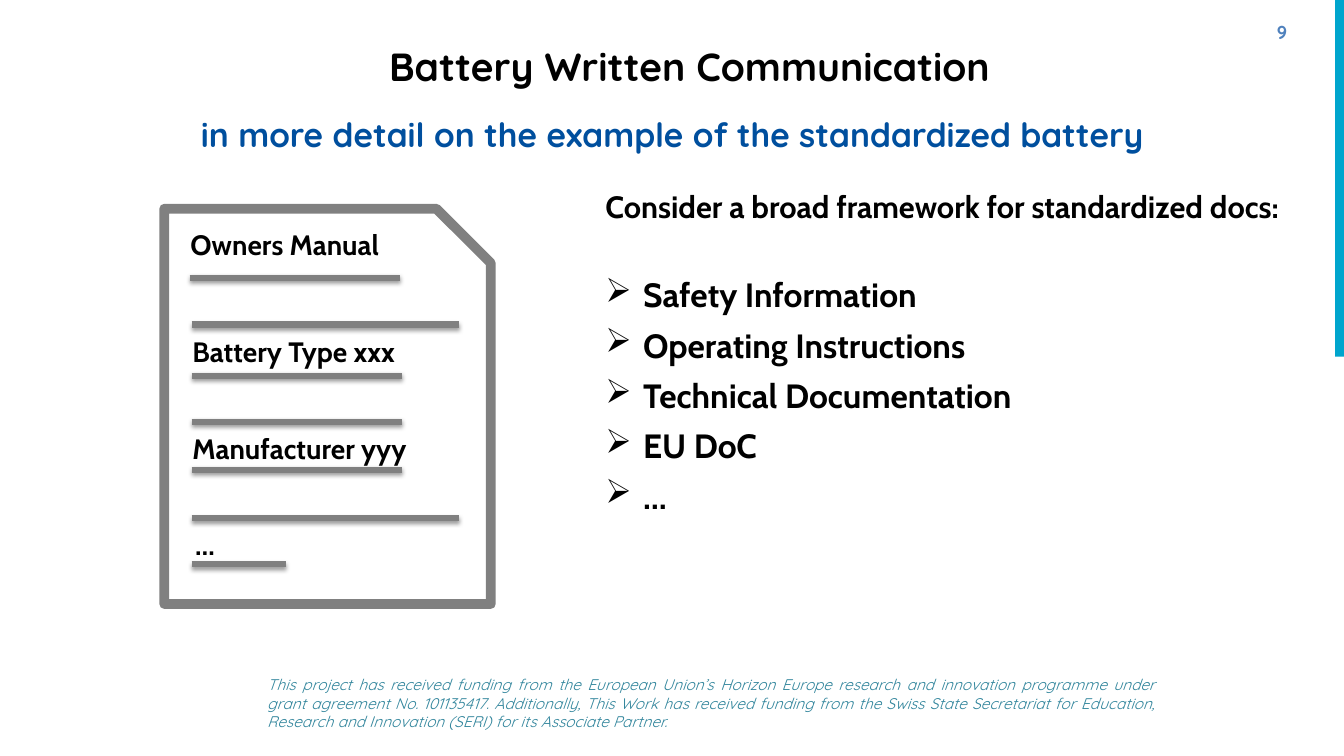
from lxml import etree
from pptx import Presentation
from pptx.dml.color import RGBColor
from pptx.enum.shapes import MSO_CONNECTOR, MSO_SHAPE
from pptx.enum.text import MSO_ANCHOR, PP_ALIGN
from pptx.oxml import parse_xml
from pptx.oxml.ns import nsdecls, qn
from pptx.util import Cm, Pt

STRAIGHT = MSO_CONNECTOR.STRAIGHT
RECTANGLE, SNIPPED = MSO_SHAPE.RECTANGLE, MSO_SHAPE.SNIP_1_RECTANGLE
TOP, MIDDLE, BOTTOM = MSO_ANCHOR.TOP, MSO_ANCHOR.MIDDLE, MSO_ANCHOR.BOTTOM
LEFT, CENTER, JUSTIFY = PP_ALIGN.LEFT, PP_ALIGN.CENTER, PP_ALIGN.JUSTIFY

HEADING_FONT, BODY_FONT = "Quicksand", "Cabin"
BLACK, GRAY, BLUE, CYAN = "000000", "808080", "004F9E", "00A5CD"
NUMBER_BLUE, TEAL = "4F81BD", "31859C"

FUNDING = (
    "This project has received funding from the European Union’s Horizon Europe "
    "research and innovation programme under grant agreement No. 101135417. "
    "Additionally, This Work has received funding from the Swiss State Secretariat "
    "for Education, Research and Innovation (SERI) for its Associate Partner."
)
SHORT, MEDIUM, LONG = 2.39, 5.31, 6.73
# Left, top and length in cm
RULES = [
    (4.78, 7.01, MEDIUM),
    (4.83, 8.18, LONG),
    (4.83, 9.47, MEDIUM),
    (4.83, 10.64, MEDIUM),
    (4.83, 11.84, MEDIUM),
    (4.83, 13.06, LONG),
    (4.83, 14.22, SHORT),
]
# Text, left, top and width in cm
ENTRIES = [
    ("Owners Manual", 4.55, 5.61, 6.22),
    ("Battery Type xxx", 4.6, 8.31, 6.73),
    ("Manufacturer yyy", 4.6, 10.74, 8.03),
    ("…", 4.67, 13.16, 4.57),
]
DOCUMENT_PARTS = [
    "Safety Information",
    "Operating Instructions",
    "Technical Documentation",
    "EU DoC",
    "…",
]


def rgb(hex_color):
    return RGBColor.from_string(hex_color)


def add_frame(slide, left, top, width, height, anchor=TOP, inset=(0.2, 0.1)):
    """Add a wrapping text box, measured in cm, and return its text frame."""
    frame = slide.shapes.add_textbox(
        Cm(left), Cm(top), Cm(width), Cm(height)
    ).text_frame
    frame.word_wrap = True
    frame.vertical_anchor = anchor
    frame.margin_left = frame.margin_right = Cm(inset[0])
    frame.margin_top = frame.margin_bottom = Cm(inset[1])
    return frame


def write(paragraph, text, size, font, color=BLACK, align=LEFT, bold=True, italic=False):
    paragraph.alignment = align
    run = paragraph.add_run()
    run.text = text
    run.font.name = font
    run.font.size = Pt(size)
    run.font.bold = bold
    run.font.italic = italic
    run.font.color.rgb = rgb(color)


def add_bullet(paragraph, symbol):
    properties = paragraph._p.get_or_add_pPr()
    properties.set("marL", str(Cm(0.95)))
    properties.set("indent", str(-Cm(0.95)))
    etree.SubElement(properties, qn("a:buChar")).set("char", symbol)


def add_accent_bar(slide):
    bar = slide.shapes.add_shape(RECTANGLE, Cm(33.65), 0, Cm(0.22), Cm(8.99))
    bar.shadow.inherit = False
    bar.fill.solid()
    bar.fill.fore_color.rgb = rgb(CYAN)
    bar.line.fill.background()


def add_page_outline(slide):
    page = slide.shapes.add_shape(SNIPPED, Cm(4.14), Cm(5.26), Cm(8.23), Cm(9.96))
    page.shadow.inherit = False
    page.fill.background()
    page.line.color.rgb = rgb(GRAY)
    page.line.width = Pt(7)


def add_rule(slide, left, top, length):
    """Add a horizontal gray line with a soft shadow below it."""
    rule = slide.shapes.add_connector(
        STRAIGHT, Cm(left), Cm(top), Cm(left + length), Cm(top)
    )
    rule.line.color.rgb = rgb(GRAY)
    rule.line.width = Pt(4.5)
    rule._element.spPr.append(parse_xml(
        f'<a:effectLst {nsdecls("a")}>'
        f'<a:outerShdw blurRad="{Pt(3.1)}" dist="{Pt(1.6)}" dir="5400000" rotWithShape="0">'
        f'<a:srgbClr val="{BLACK}"><a:alpha val="38000"/></a:srgbClr>'
        '</a:outerShdw></a:effectLst>'
    ))


def add_framework(slide):
    frame = add_frame(slide, 15.06, 4.62, 17.6, 12.09)
    heading = frame.paragraphs[0]
    heading.space_after = Pt(3)
    write(heading, "Consider a broad framework for standardized docs:", 22, BODY_FONT,
          align=JUSTIFY)
    for index, part in enumerate(DOCUMENT_PARTS):
        item = frame.add_paragraph()
        add_bullet(item, "➢")
        item.space_before = Pt(4.2 if index else 32.6)
        item.space_after = Pt(3)
        write(item, part, 24, BODY_FONT, align=JUSTIFY)


def main():
    presentation = Presentation()
    presentation.slide_width, presentation.slide_height = Cm(33.87), Cm(19.05)
    slide = presentation.slides.add_slide(presentation.slide_layouts[6])

    add_accent_bar(slide)
    page_number = add_frame(slide, 31.98, 0.43, 1.07, 1.02)
    write(page_number.paragraphs[0], "9", 13.3, HEADING_FONT, NUMBER_BLUE)
    title = add_frame(slide, 1.68, 0.74, 31.39, 1.85, MIDDLE)
    write(title.paragraphs[0], "Battery Written Communication", 28, HEADING_FONT,
          align=CENTER)
    subtitle = add_frame(slide, 1.7, 2.9, 30.48, 1.09, BOTTOM)
    write(subtitle.paragraphs[0],
          "in more detail on the example of the standardized battery",
          24, HEADING_FONT, BLUE, CENTER)
    funding = add_frame(slide, 6.53, 16.92, 22.81, 1.6)
    write(funding.paragraphs[0], FUNDING, 11, HEADING_FONT, TEAL, JUSTIFY,
          bold=False, italic=True)

    add_page_outline(slide)
    for left, top, length in RULES:
        add_rule(slide, left, top, length)
    for text, left, top, width in ENTRIES:
        entry = add_frame(slide, left, top, width, 1.12, inset=(0.25, 0.13))
        write(entry.paragraphs[0], text, 20, BODY_FONT)
    add_framework(slide)

    presentation.save("out.pptx")


if __name__ == "__main__":
    main()
